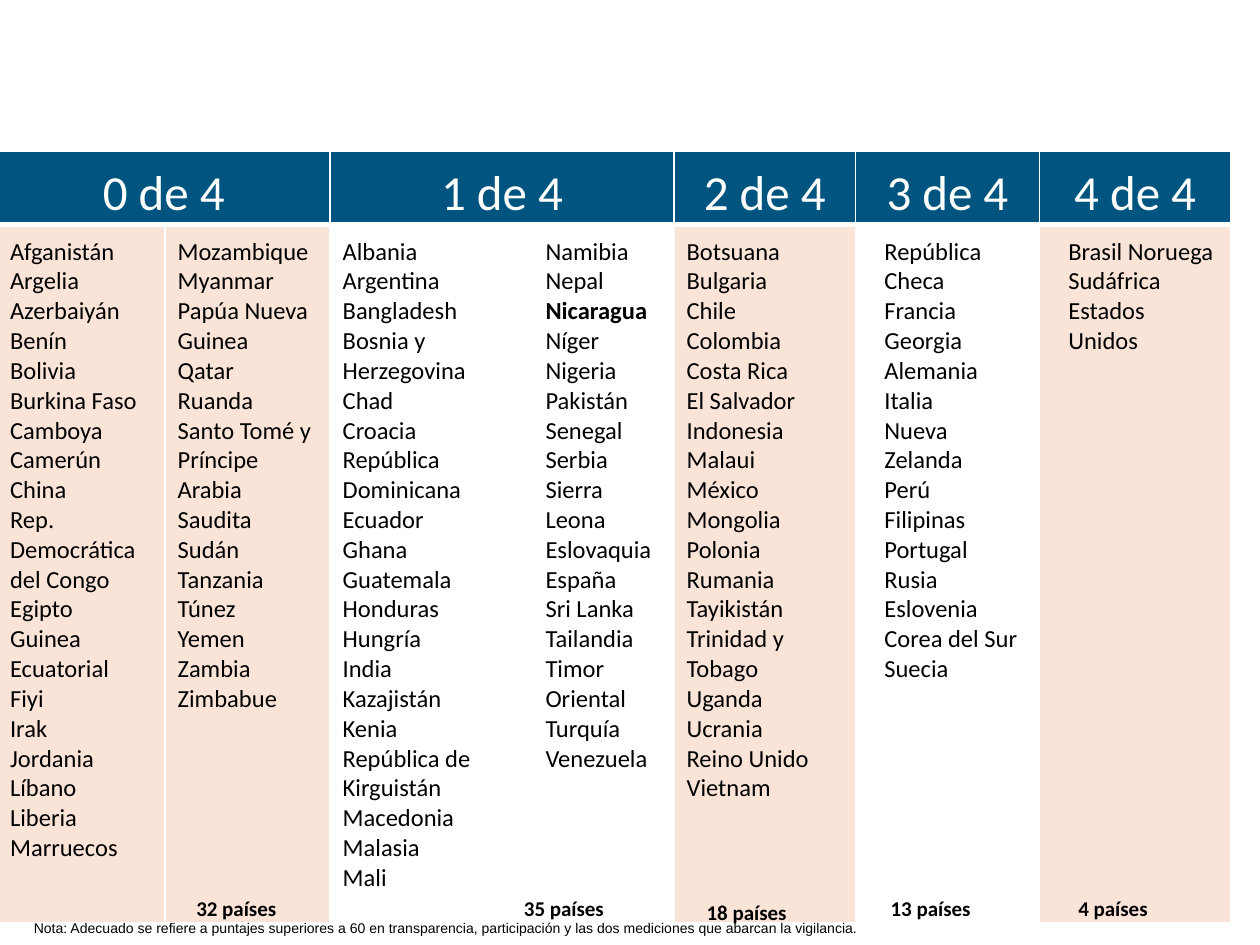
from lxml import etree
from pptx import Presentation
from pptx.dml.color import RGBColor
from pptx.enum.text import PP_ALIGN
from pptx.oxml.ns import qn
from pptx.util import Inches, Pt

CENTER = PP_ALIGN.CENTER
COLORS = {"header": "005580", "tint": "E77033", "white": "FFFFFF", "text": "000000"}

WIDTHS = [1.33, 1.31, 1.61, 1.12, 1.44, 1.46, 1.52]
HEADERS = [(0, 1, "0 de 4"), (2, 3, "1 de 4"), (4, 4, "2 de 4"), (5, 5, "3 de 4"), (6, 6, "4 de 4")]
TINTED = {0, 1, 4, 6}
INDENTED = {5, 6}
COUNTRIES = [
    ["Afganistán", "Argelia", "Azerbaiyán", "Benín", "Bolivia", "Burkina Faso",
     "Camboya", "Camerún", "China", "Rep. Democrática del Congo", "Egipto",
     "Guinea Ecuatorial", "Fiyi", "Irak", "Jordania", "Líbano", "Liberia", "Marruecos"],
    ["Mozambique", "Myanmar", "Papúa Nueva Guinea", "Qatar", "Ruanda",
     "Santo Tomé y Príncipe", "Arabia Saudita", "Sudán", "Tanzania", "Túnez",
     "Yemen", "Zambia", "Zimbabue"],
    ["Albania", "Argentina", "Bangladesh", "Bosnia y Herzegovina", "Chad", "Croacia",
     "República", "Dominicana", "Ecuador", "Ghana", "Guatemala", "Honduras Hungría",
     "India", "Kazajistán", "Kenia", "República de Kirguistán", "Macedonia",
     "Malasia", "Mali"],
    ["Namibia", "Nepal", "Nicaragua", "Níger", "Nigeria", "Pakistán", "Senegal",
     "Serbia", "Sierra Leona", "Eslovaquia", "España", "Sri Lanka", "Tailandia",
     "Timor Oriental", "Turquía", "Venezuela"],
    ["Botsuana", "Bulgaria", "Chile", "Colombia", "Costa Rica", "El Salvador",
     "Indonesia", "Malaui", "México", "Mongolia", "Polonia", "Rumania", "Tayikistán",
     "Trinidad y Tobago", "Uganda", "Ucrania", "Reino Unido", "Vietnam"],
    ["República Checa", "Francia", "Georgia", "Alemania", "Italia", "Nueva Zelanda",
     "Perú", "Filipinas", "Portugal", "Rusia", "Eslovenia", "Corea del Sur", "Suecia"],
    ["Brasil Noruega", "Sudáfrica", "Estados Unidos"],
]
LABELS = [
    (1.46, 7.06, 1.33, 0.3, "32 países", "Calibri", 12, True),
    (4.06, 7.06, 1.33, 0.3, "35 países", "Calibri", 12, True),
    (5.51, 7.09, 1.33, 0.3, "18 países", "Calibri", 12, True),
    (6.97, 7.06, 1.33, 0.3, "13 países", "Calibri", 12, True),
    (8.46, 7.06, 1.33, 0.3, "4 países", "Calibri", 12, True),
    (0.17, 7.25, 9.1, 0.24,
     "Nota: Adecuado se refiere a puntajes superiores a 60 en transparencia, "
     "participación y las dos mediciones que abarcan la vigilancia.", "Arial", 8, False),
]


def style_font(p, name, size, color, bold=False):
    for r in p.runs:
        r.font.name = name
        r.font.size = Pt(size)
        r.font.bold = bold
        r.font.color.rgb = RGBColor.from_string(COLORS[color])


def style_cell(cell, color, bottom=1, alpha=None):
    cell.margin_left = cell.margin_right = cell.margin_top = Inches(0.1)
    cell.margin_bottom = 0
    cell.fill.solid()
    cell.fill.fore_color.rgb = RGBColor.from_string(COLORS[color])
    tcPr = cell._tc.get_or_add_tcPr()
    if alpha:
        clr = tcPr.find(".//" + qn("a:srgbClr"))
        etree.SubElement(clr, qn("a:alpha"), val=str(alpha * 1000))
    for i, (side, width) in enumerate([("L", 1), ("R", 1), ("T", 1), ("B", bottom)]):
        ln = etree.Element(qn("a:ln" + side), w=str(Pt(width)))
        fill = etree.SubElement(ln, qn("a:solidFill"))
        etree.SubElement(fill, qn("a:srgbClr"), val=COLORS["white"])
        tcPr.insert(i, ln)


prs = Presentation()
prs.slide_width, prs.slide_height = Inches(10), Inches(7.5)
s = prs.slides.add_slide(prs.slide_layouts[6])

table = s.shapes.add_table(2, len(WIDTHS), Inches(-0.02), Inches(1.2),
                           Inches(sum(WIDTHS)), Inches(6.12)).table
table.horz_banding = False
table.rows[0].height = Inches(0.58)
table.rows[1].height = Inches(5.54)
for column, width in zip(table.columns, WIDTHS):
    column.width = Inches(width)

for first, last, text in HEADERS:
    cell = table.cell(0, first)
    if last > first:
        cell.merge(table.cell(0, last))
    cell.text_frame.text = text
    p = cell.text_frame.paragraphs[0]
    p.alignment = CENTER
    style_font(p, "Calibri", 28, "white")
    for col in range(first, last + 1):
        style_cell(table.cell(0, col), "header", bottom=3)

for col, names in enumerate(COUNTRIES):
    cell = table.cell(1, col)
    cell.text_frame.text = "\n".join(names)
    for p in cell.text_frame.paragraphs:
        if col in INDENTED:
            p._p.get_or_add_pPr().set("marL", str(Inches(0.13)))
        style_font(p, "Calibri", 14, "text", bold=p.text == "Nicaragua")
    if col in TINTED:
        style_cell(cell, "tint", alpha=19)
    else:
        style_cell(cell, "white")

for left, top, width, height, text, font, size, bold in LABELS:
    tf = s.shapes.add_textbox(Inches(left), Inches(top), Inches(width), Inches(height)).text_frame
    tf.word_wrap = True
    tf.text = text
    style_font(tf.paragraphs[0], font, size, "text", bold)

prs.save("out.pptx")
